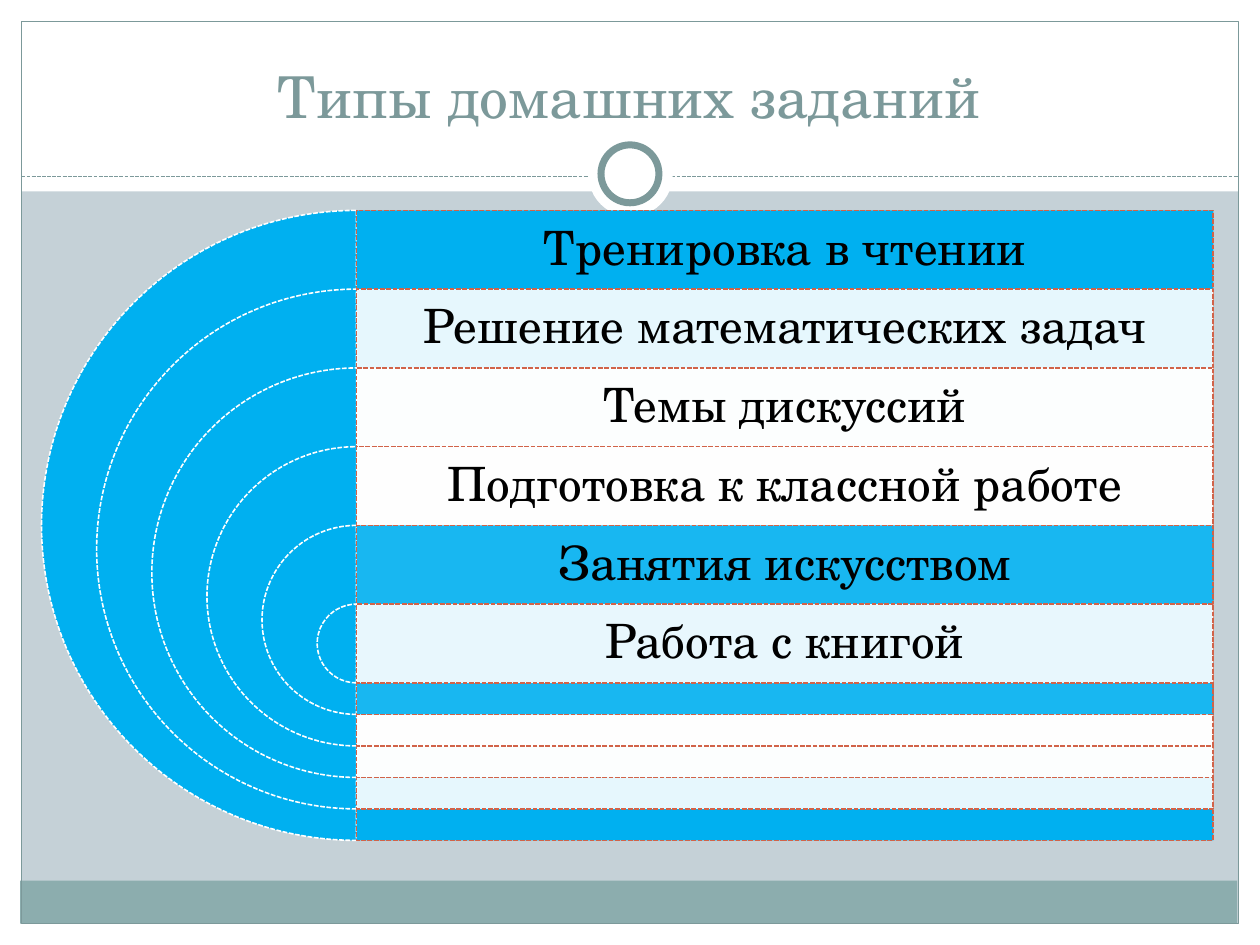
from dataclasses import dataclass

from lxml.etree import SubElement
from pptx import Presentation
from pptx.dml.color import RGBColor
from pptx.enum.dml import MSO_LINE
from pptx.enum.shapes import MSO_CONNECTOR, MSO_SHAPE
from pptx.enum.text import MSO_ANCHOR, PP_ALIGN
from pptx.oxml.ns import qn
from pptx.util import Inches, Pt


@dataclass(frozen=True)
class Theme:
    font: str = "TeX Gyre Schola"
    title: int = 33
    label: int = 27
    back: str = "C5D1D7"
    white: str = "FFFFFF"
    black: str = "000000"
    sage: str = "7C999A"
    foot: str = "8CADAE"
    blue: str = "00B0F0"
    rust: str = "D16349"
    hair: float = 0.75
    dash: float = 0.9
    ring: float = 4


THEME = Theme()

# Label and band colour, from the outer ring to the inner one
ROWS = [
    ("Тренировка в чтении", THEME.blue),
    ("Решение математических задач", THEME.white),
    ("Темы дискуссий", THEME.white),
    ("Подготовка к классной работе", THEME.white),
    ("Занятия искусством", THEME.blue),
    ("Работа с книгой", THEME.white),
]


def rgb(code):
    return RGBColor.from_string(code)


def set_line(line, color, width, dashed=False):
    line.color.rgb = rgb(color)
    line.width = Pt(width)
    if dashed:
        line.dash_style = MSO_LINE.SQUARE_DOT


def add_form(slide, kind, box, fill=None, edge=None, width=THEME.hair, dashed=False):
    shape = slide.shapes.add_shape(kind, *map(Inches, box))
    shape.shadow.inherit = False
    if fill:
        shape.fill.solid()
        shape.fill.fore_color.rgb = rgb(fill)
    else:
        shape.fill.background()
    if edge:
        set_line(shape.line, edge, width, dashed)
    else:
        shape.line.fill.background()
    return shape


def set_alpha(shape, percent):
    color = shape.fill._xPr.find(qn("a:solidFill"))[0]
    SubElement(color, qn("a:alpha"), val=str(percent * 1000))


def set_text(frame, text, size, color, anchor):
    frame.word_wrap = True
    frame.vertical_anchor = anchor
    para = frame.paragraphs[0]
    para.text = text
    para.alignment = PP_ALIGN.CENTER
    para.font.name = THEME.font
    para.font.size = Pt(size)
    para.font.color.rgb = rgb(color)
    return para


def add_label(slide, box, text):
    frame = slide.shapes.add_textbox(*map(Inches, box)).text_frame
    frame.margin_left = frame.margin_right = Inches(0.11)
    frame.margin_top = frame.margin_bottom = Inches(0.11)
    para = set_text(frame, text, THEME.label, THEME.black, MSO_ANCHOR.MIDDLE)
    para.line_spacing = 0.9


def add_rule(slide, left, right, y):
    ends = map(Inches, (left, y, right, y))
    rule = slide.shapes.add_connector(MSO_CONNECTOR.STRAIGHT, *ends)
    set_line(rule.line, THEME.sage, THEME.hair, dashed=True)
    SubElement(rule._element.spPr, qn("a:effectLst"))


def add_frame(slide):
    rect, oval = MSO_SHAPE.RECTANGLE, MSO_SHAPE.OVAL
    # White margins and the head area
    for box in ((0, 7.33, 10, 0.17), (0, 0, 10, 1.52),
                (0, 0, 0.17, 7.5), (9.83, 0, 0.17, 7.5)):
        add_form(slide, rect, box, THEME.white)
    # Foot bar, border and rule
    add_form(slide, rect, (0.16, 6.99, 9.66, 0.34), THEME.foot)
    add_form(slide, rect, (0.17, 0.17, 9.66, 7.16), edge=THEME.sage)
    add_rule(slide, 0.17, 9.83, 1.4)
    # Ring on the rule
    add_form(slide, oval, (4.67, 1.05, 0.67, 0.67), THEME.white)
    add_form(slide, oval, (4.77, 1.15, 0.46, 0.46), THEME.white, THEME.sage, THEME.ring)


def add_title(slide, text):
    title = slide.shapes.title
    title.left, title.top = Inches(0.33), Inches(0.25)
    title.width, title.height = Inches(9.33), Inches(0.83)
    set_text(title.text_frame, text, THEME.title, THEME.sage, MSO_ANCHOR.BOTTOM)
    # Bring the title in front of the head area
    slide.shapes._spTree.append(title._element)


def add_target(slide, rows):
    full, top, mid, wide = 5, 1.67, 2.83, 6.8
    step = 0.625
    shrink = step * 1.4
    for i, (text, fill) in enumerate(rows):
        size = full - i * shrink
        y = top + i * step
        # Half disc on the left
        disc = add_form(slide, MSO_SHAPE.PIE, (mid - size / 2, y, size, size),
                        THEME.blue, THEME.white, THEME.dash, dashed=True)
        disc.adjustments[0], disc.adjustments[1] = 54, 162
        # Band on the right
        band = add_form(slide, MSO_SHAPE.RECTANGLE, (mid, y, wide, size),
                        fill, THEME.rust, THEME.dash, dashed=True)
        if i:
            set_alpha(band, 90)
        add_label(slide, (mid, y, wide, step), text)


def main():
    deck = Presentation()
    deck.slide_width, deck.slide_height = Inches(10), Inches(7.5)
    slide = deck.slides.add_slide(deck.slide_layouts[5])
    slide.background.fill.solid()
    slide.background.fill.fore_color.rgb = rgb(THEME.back)
    add_frame(slide)
    add_title(slide, "Типы домашних заданий")
    add_target(slide, ROWS)
    deck.save("out.pptx")


if __name__ == "__main__":
    main()
